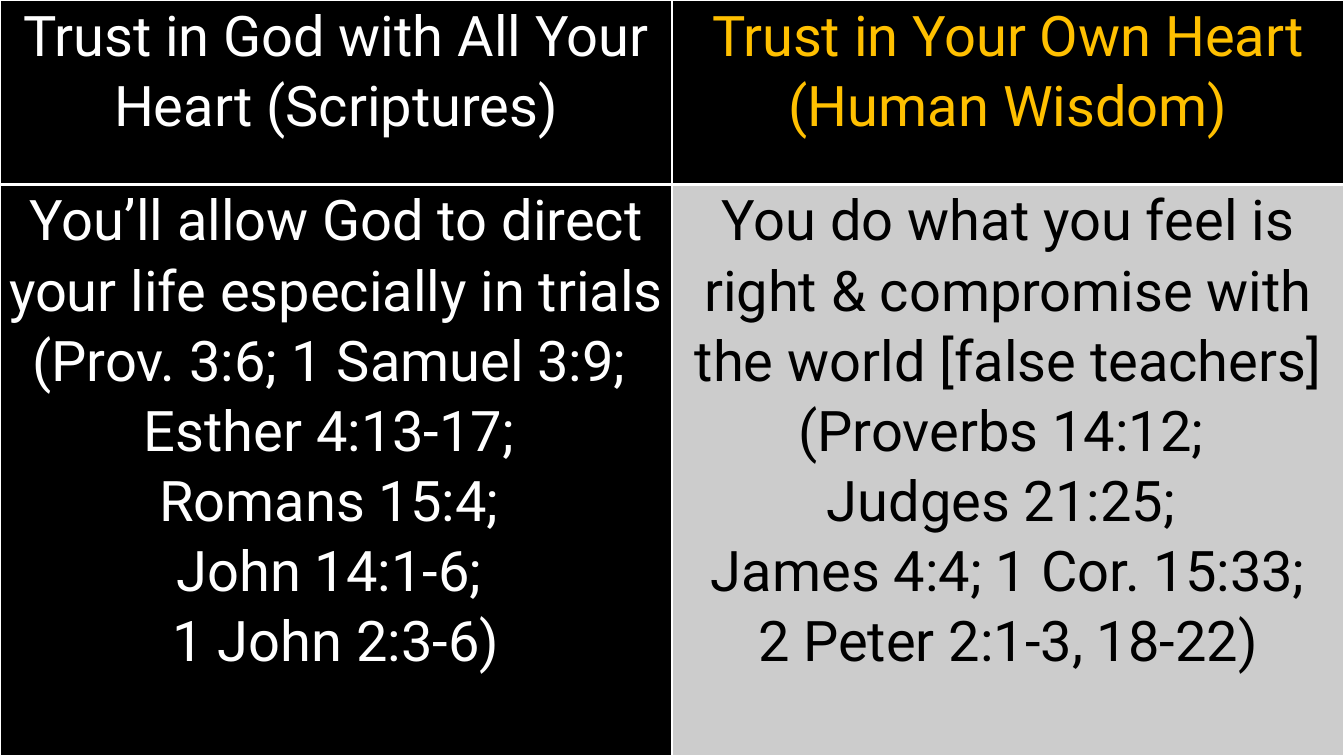
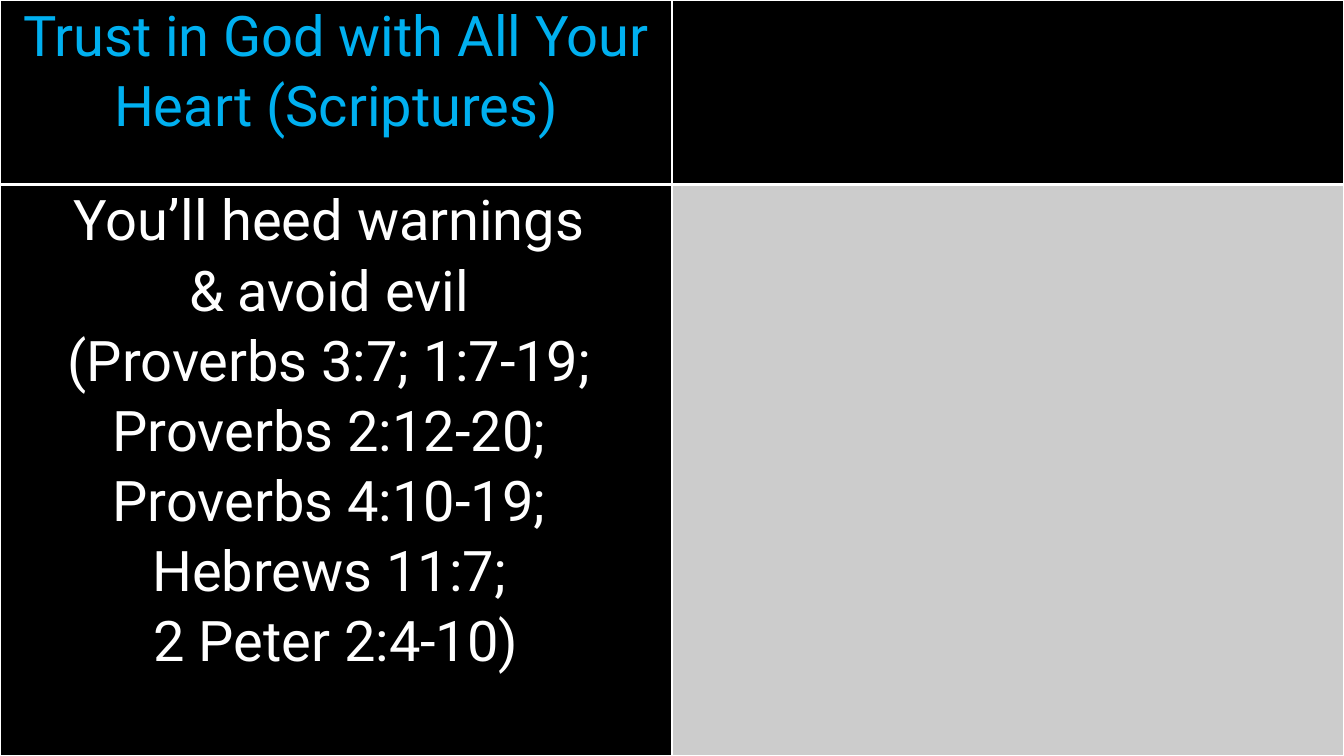
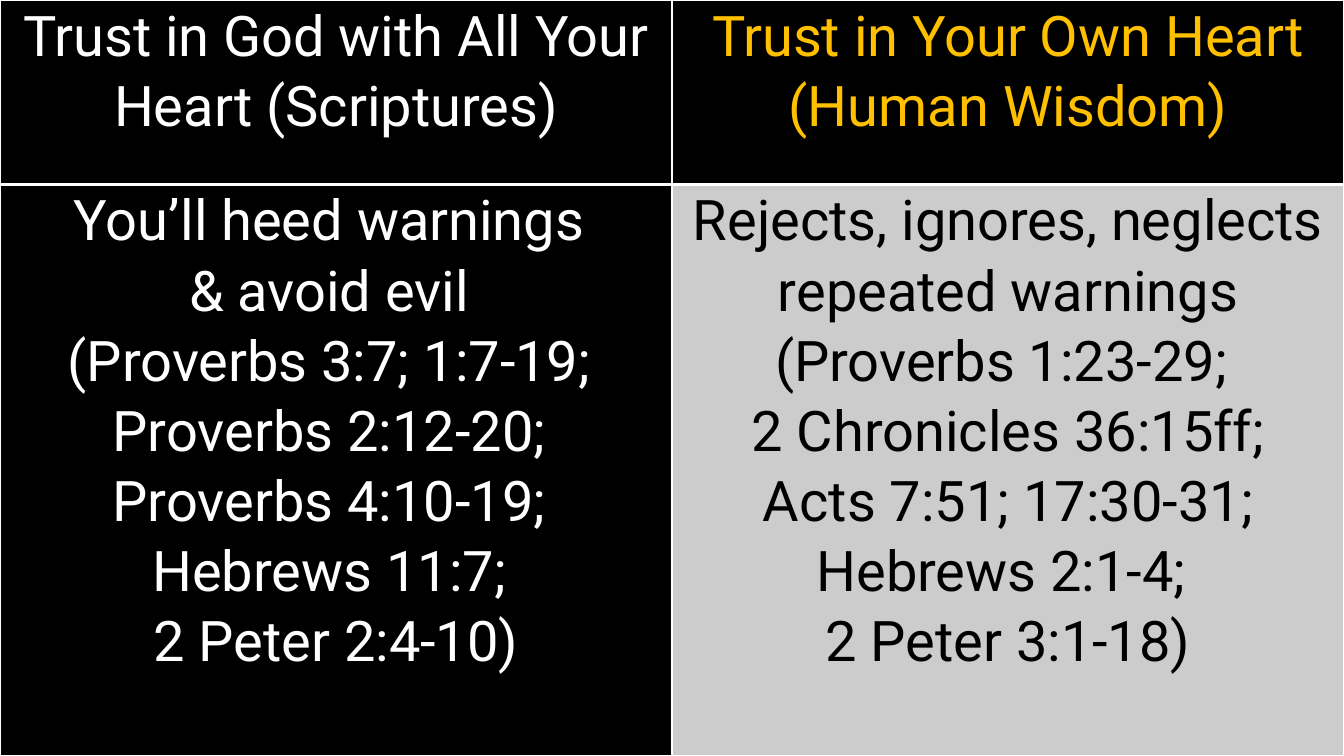
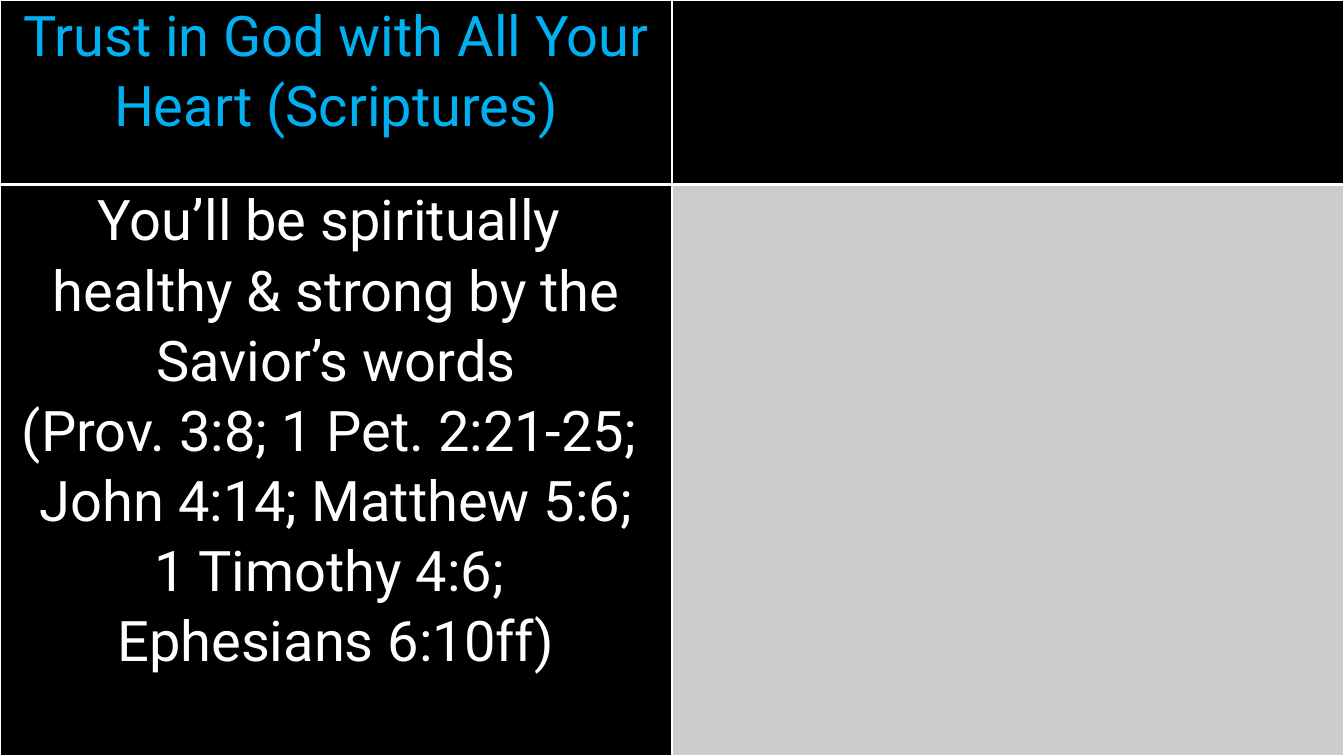
from dataclasses import dataclass

from pptx import Presentation
from pptx.dml.color import RGBColor
from pptx.enum.text import PP_ALIGN
from pptx.oxml import parse_xml
from pptx.oxml.ns import nsdecls
from pptx.presentation import Presentation as Deck
from pptx.table import _Cell as Cell
from pptx.util import Inches, Pt

COLORS = {
    "black": "000000",
    "white": "FFFFFF",
    "gold": "FFC000",
    "blue": "00B0F0",
    "gray": "CCCCCC",
}
FONT = "Roboto"
FONT_SIZE = 40
LINE_SPACING = 1.07
SLIDE_WIDTH, SLIDE_HEIGHT = 13.33, 7.5
HEADER_HEIGHT = 1.83
ROW_HEIGHTS = (HEADER_HEIGHT, SLIDE_HEIGHT - HEADER_HEIGHT)
THIN, THICK = 1, 3


@dataclass(frozen=True)
class CellContent:
    lines: tuple[str, ...] = ()
    text_color: str = "white"
    fill: str = "black"


@dataclass(frozen=True)
class Comparison:
    god_header: CellContent
    own_header: CellContent
    god_body: CellContent
    own_body: CellContent

    def rows(self) -> tuple[tuple[CellContent, CellContent], ...]:
        return (self.god_header, self.own_header), (self.god_body, self.own_body)


GOD_TITLE = ("Trust in God with All Your Heart (Scriptures)",)
GOD_HEADER = CellContent(GOD_TITLE)
GOD_HEADER_FOCUS = CellContent(GOD_TITLE, "blue")
OWN_HEADER = CellContent(("Trust in Your Own Heart (Human Wisdom)",), "gold")
EMPTY_HEADER = CellContent()
EMPTY_BODY = CellContent(fill="gray")

DIRECTION = CellContent((
    "You’ll allow God to direct your life especially in trials (Prov. 3:6; 1 Samuel 3:9; ",
    "Esther 4:13-17; ",
    "Romans 15:4; ",
    "John 14:1-6; ",
    "1 John 2:3-6)",
))
COMPROMISE = CellContent((
    "You do what you feel is right & compromise with the world [false teachers] (Proverbs 14:12; ",
    "Judges 21:25; ",
    "James 4:4; 1 Cor. 15:33;",
    "2 Peter 2:1-3, 18-22)",
), "black", "gray")
WARNINGS_HEEDED = CellContent((
    "You’ll heed warnings ",
    "& avoid evil ",
    "(Proverbs 3:7; 1:7-19; ",
    "Proverbs 2:12-20; ",
    "Proverbs 4:10-19; ",
    "Hebrews 11:7; ",
    "2 Peter 2:4-10)",
))
WARNINGS_REJECTED = CellContent((
    "Rejects, ignores, neglects repeated warnings",
    "(Proverbs 1:23-29; ",
    "2 Chronicles 36:15ff;",
    "Acts 7:51; 17:30-31;",
    "Hebrews 2:1-4; ",
    "2 Peter 3:1-18)",
), "black", "gray")
SPIRITUAL_HEALTH = CellContent((
    "You’ll be spiritually ",
    "healthy & strong by the",
    "Savior’s words",
    "(Prov. 3:8; 1 Pet. 2:21-25; ",
    "John 4:14; Matthew 5:6;",
    "1 Timothy 4:6; ",
    "Ephesians 6:10ff)",
))

COMPARISONS = (
    Comparison(GOD_HEADER, OWN_HEADER, DIRECTION, COMPROMISE),
    Comparison(GOD_HEADER_FOCUS, EMPTY_HEADER, WARNINGS_HEEDED, EMPTY_BODY),
    Comparison(GOD_HEADER, OWN_HEADER, WARNINGS_HEEDED, WARNINGS_REJECTED),
    Comparison(GOD_HEADER_FOCUS, EMPTY_HEADER, SPIRITUAL_HEALTH, EMPTY_BODY),
)


def rgb(name: str) -> RGBColor:
    return RGBColor.from_string(COLORS[name])


def set_borders(cell: Cell, top: float, bottom: float) -> None:
    properties = cell._tc.get_or_add_tcPr()
    for side, width in (("L", THIN), ("R", THIN), ("T", top), ("B", bottom)):
        properties.append(parse_xml(
            f'<a:ln{side} {nsdecls("a")} w="{Pt(width)}"><a:solidFill>'
            f'<a:srgbClr val="{COLORS["white"]}"/></a:solidFill></a:ln{side}>'
        ))


def fill_cell(cell: Cell, content: CellContent) -> None:
    cell.fill.solid()
    cell.fill.fore_color.rgb = rgb(content.fill)
    cell.margin_left = cell.margin_right = Inches(0.07)
    cell.margin_top = cell.margin_bottom = 0
    if not content.lines:
        return
    cell.text_frame.text = "\n".join(content.lines)
    for paragraph in cell.text_frame.paragraphs:
        paragraph.alignment = PP_ALIGN.CENTER
        paragraph.line_spacing = LINE_SPACING
        for run in paragraph.runs:
            run.font.name = FONT
            run.font.size = Pt(FONT_SIZE)
            run.font.bold = False
            run.font.color.rgb = rgb(content.text_color)


def add_comparison(presentation: Deck, comparison: Comparison) -> None:
    slide = presentation.slides.add_slide(presentation.slide_layouts[6])
    table = slide.shapes.add_table(
        2, 2, 0, 0, Inches(SLIDE_WIDTH), Inches(SLIDE_HEIGHT)
    ).table
    table.horz_banding = False
    for row, height in zip(table.rows, ROW_HEIGHTS):
        row.height = Inches(height)
    for row_index, contents in enumerate(comparison.rows()):
        top, bottom = (THIN, THICK) if row_index == 0 else (THICK, THIN)
        for column_index, content in enumerate(contents):
            cell = table.cell(row_index, column_index)
            set_borders(cell, top, bottom)
            fill_cell(cell, content)


def main() -> None:
    presentation = Presentation()
    presentation.slide_width = Inches(SLIDE_WIDTH)
    presentation.slide_height = Inches(SLIDE_HEIGHT)
    background = presentation.slide_master.background.fill
    background.solid()
    background.fore_color.rgb = rgb("black")
    for comparison in COMPARISONS:
        add_comparison(presentation, comparison)
    presentation.save("out.pptx")


if __name__ == "__main__":
    main()
